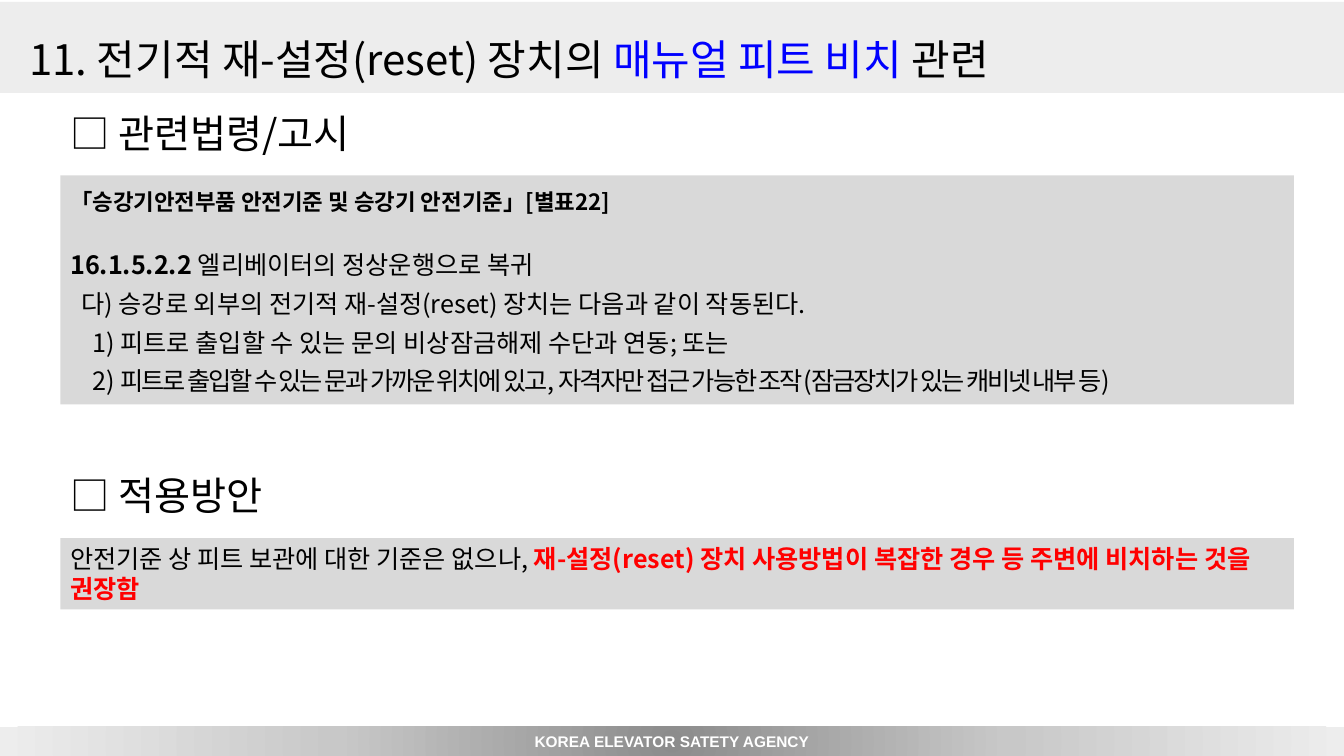
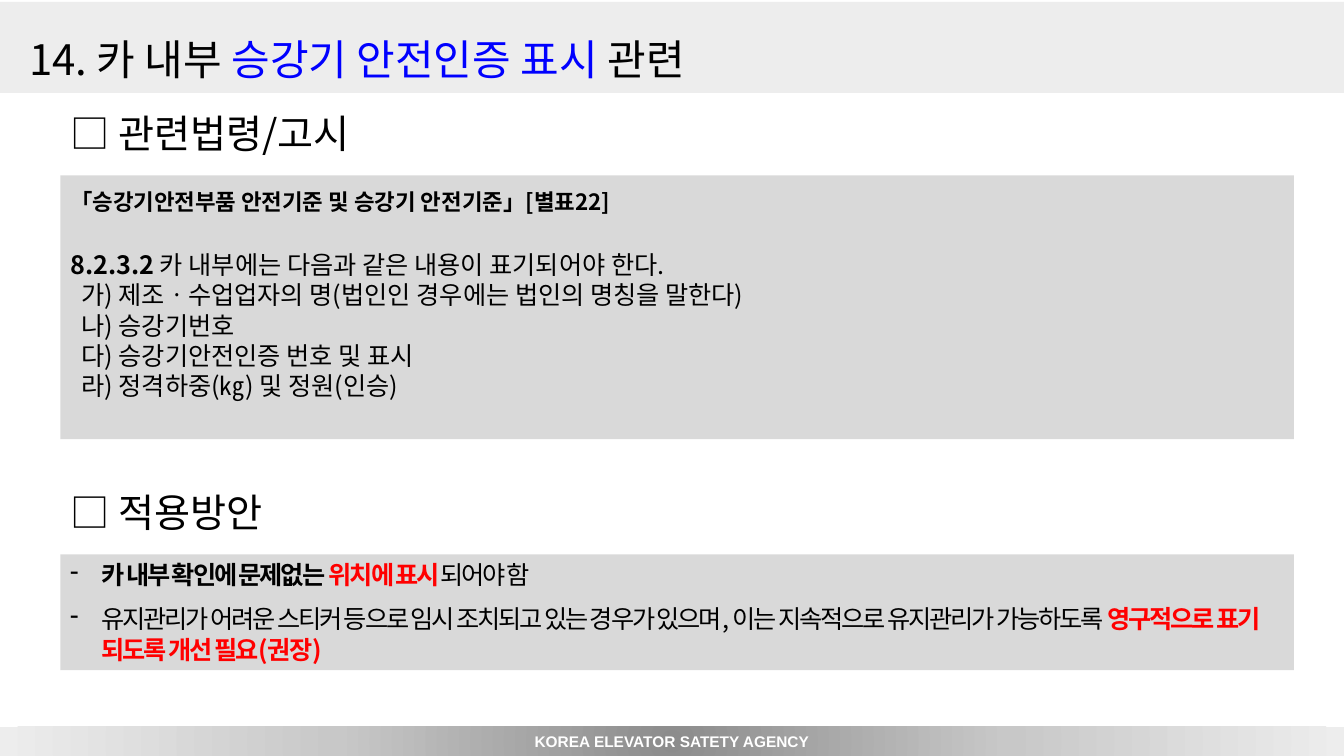
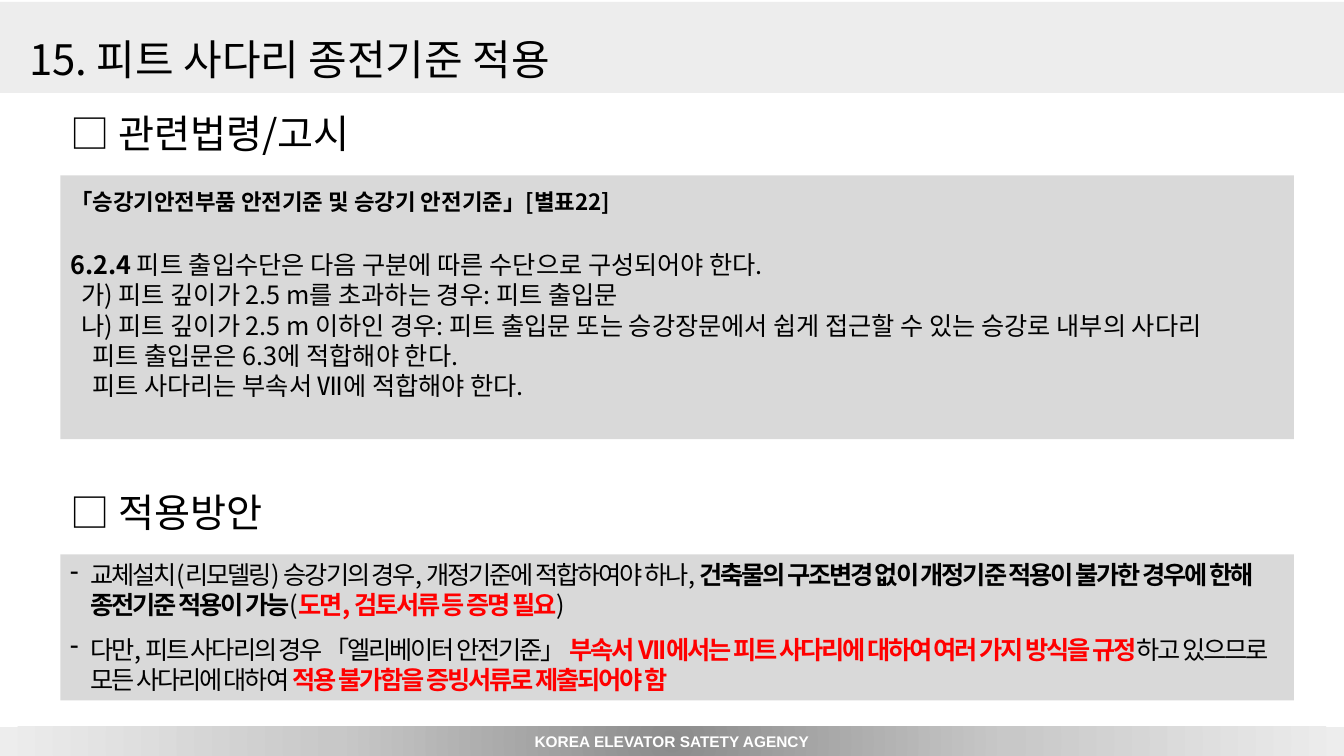
from dataclasses import dataclass
from functools import partial

from pptx import Presentation
from pptx.dml.color import RGBColor
from pptx.enum import shapes, text
from pptx.oxml import parse_xml
from pptx.oxml.ns import nsdecls, qn
from pptx.util import Cm, Pt

HUES = {"black": "000000", "blue": "0000FF", "red": "FF0000", "white": "FFFFFF",
        "band": "EDEDED", "panel": "D9D9D9", "mid": "C8C8C8", "dark": "8C8C8C"}
FONT = "Noto Sans CJK KR"
WIDE, HIGH = 33.87, 19.05
LEFT, SPAN = 1.52, 31.09   # panels
RULE_TOP = 4.42            # top of the upper panel
LIFT = 1.8                 # heading above its panel
STEP = 0.28                # indent of one level


@dataclass
class Run:
    text: str
    bold: bool = False
    hue: str = "black"
    tight: bool = False
    size: float = 18


@dataclass
class Para:
    runs: list[Run]
    left: float = 0
    before: float = 0
    lines: float = 1
    dash: bool = False


@dataclass
class Page:
    title: list[Run]
    rule: list[Para]
    rule_high: float
    plan: list[Para]
    plan_top: float
    plan_high: float


Close = partial(Run, tight=True)
Key = partial(Run, bold=True, hue="red")
Head = partial(Run, size=30)


def color(name: str) -> RGBColor:
    return RGBColor.from_string(HUES[name])


def add_run(par, run: Run, face: str = FONT) -> None:
    item = par.add_run()
    item.text = run.text
    font = item.font
    font.size, font.bold, font.name = Pt(run.size), run.bold, face
    font.color.rgb = color(run.hue)
    props = item._r.get_or_add_rPr()
    props.find(qn("a:latin")).addnext(
        parse_xml(f'<a:ea {nsdecls("a")} typeface="{face}"/>'))
    if run.tight:
        props.set("spc", "-150")


def fill_text(frame, paras: list[Para]) -> None:
    frame.word_wrap = True
    frame.auto_size = text.MSO_AUTO_SIZE.NONE
    frame.vertical_anchor = text.MSO_ANCHOR.TOP
    for i, para in enumerate(paras):
        par = frame.add_paragraph() if i else frame.paragraphs[0]
        props = par._p.get_or_add_pPr()
        props.set("marL", str(Cm(para.left)))
        props.set("indent", str(-Cm(para.left) if para.dash else 0))
        if para.dash:
            props.append(parse_xml(f'<a:buChar {nsdecls("a")} char="-"/>'))
        par.alignment = text.PP_ALIGN.LEFT
        par.line_spacing = para.lines
        par.space_before = Pt(para.before)
        for run in para.runs:
            add_run(par, run)


def add_box(slide, left: float, top: float, wide: float, high: float, hue: str):
    box = slide.shapes.add_shape(shapes.MSO_SHAPE.RECTANGLE,
                                 Cm(left), Cm(top), Cm(wide), Cm(high))
    box.shadow.inherit = False
    box.line.fill.background()
    box.fill.solid()
    box.fill.fore_color.rgb = color(hue)
    return box


def add_part(slide, name: str, wide: float, top: float, high: float,
             paras: list[Para]) -> None:
    """Heading with the grey panel below it."""
    panel = add_box(slide, LEFT, top, SPAN, high, "panel")
    fill_text(panel.text_frame, paras)
    label = slide.shapes.add_textbox(Cm(LEFT), Cm(top - LIFT), Cm(wide), Cm(1.45))
    fill_text(label.text_frame, [Para([Run(name, size=28)])])


def dress(layout, slide) -> None:
    """Put the title place, top band and footer on the layout."""
    band = add_box(slide, 0, 0.05, WIDE, 2.29, "band")
    foot = add_box(slide, 0, 18.31, WIDE, 0.74, "mid")
    stops = "".join(
        f'<a:gs pos="{pos * 1000}"><a:srgbClr val="{HUES[hue]}"/></a:gs>'
        for pos, hue in ((0, "dark"), (50, "mid"), (100, "band")))
    solid = foot.element.spPr.find(qn("a:solidFill"))
    foot.element.spPr.replace(solid, parse_xml(
        f'<a:gradFill {nsdecls("a")}><a:gsLst>{stops}</a:gsLst><a:path path="circle">'
        '<a:fillToRect l="50000" t="50000" r="50000" b="50000"/></a:path></a:gradFill>'))
    foot.text_frame.vertical_anchor = text.MSO_ANCHOR.MIDDLE
    par = foot.text_frame.paragraphs[0]
    par.alignment = text.PP_ALIGN.CENTER
    add_run(par, Run("KOREA ELEVATOR SATETY AGENCY", True, "white", size=11), "Arial")
    for part in (foot, band):
        layout.shapes.element.insert(2, part.element)
    title = layout.placeholders[0]
    title.left, title.top = Cm(0.48), Cm(0.71)
    title.width, title.height = Cm(32.5), Cm(1.55)


def law(code: str, lead: str) -> list[Para]:
    """Opening lines of each upper panel."""
    return [Para([Run("「승강기안전부품 안전기준 및 승강기 안전기준」[별표22]", True, size=16)],
                 lines=1.3),
            Para([Run(code + " ", True), Run(lead)], before=24.5)]


def items(*rows: tuple[int, str]) -> list[Para]:
    return [Para([Run(line)], left=level * STEP) for level, line in rows]


PAGES = [
    Page(
        [Head("11. 전기적 재-설정(reset) 장치의 "), Head("매뉴얼 피트 비치 ", hue="blue"),
         Head("관련")],
        law("16.1.5.2.2", "엘리베이터의 정상운행으로 복귀") + [
            Para([Run("다) 승강로 외부의 전기적 재-설정(reset) 장치는 다음과 같이 작동된다.")],
                 STEP, 6),
            Para([Run("1) 피트로 출입할 수 있는 문의 비상잠금해제 수단과 연동; 또는")],
                 2 * STEP, 6),
            Para([Run("2) "),
                  Close("피트로 출입할 수 있는 문과 가까운 위치에 있고, "
                        "자격자만 접근 가능한 조작(잠금장치가 있는 캐비넷 내부 등)")],
                 2 * STEP, 6)],
        5.77,
        [Para([Run("안전기준 상 피트 보관에 대한 기준은 없으나, "),
               Key("재-설정(reset) 장치 사용방법이 복잡한 경우 등 주변에 비치하는 것을 권장함")])],
        13.56, 1.8),
    Page(
        [Head("14. 카 내부 "), Head("승강기 안전인증 표시 ", hue="blue"), Head("관련")],
        law("8.2.3.2", "카 내부에는 다음과 같은 내용이 표기되어야 한다.") + items(
            (1, "가) 제조ㆍ수업업자의 명(법인인 경우에는 법인의 명칭을 말한다)"),
            (1, "나) 승강기번호"),
            (1, "다) 승강기안전인증 번호 및 표시"),
            (1, "라) 정격하중(㎏) 및 정원(인승)")),
        6.65,
        [Para([Close("카 내부 확인에 문제없는 ", True), Key("위치에 표시", tight=True),
               Close("되어야 함")], 0.79, dash=True),
         Para([Close("유지관리가 어려운 스티커 등으로 임시 조치되고 있는 경우가 있으며, "
                     "이는 지속적으로 유지관리가 가능하도록 "),
               Key("영구적으로 표기 되도록 개선 필요(권장)", tight=True)],
              0.79, 10, dash=True)],
        13.97, 2.92),
    Page(
        [Head("15. 피트 사다리 종전기준 적용")],
        law("6.2.4", "피트 출입수단은 다음 구분에 따른 수단으로 구성되어야 한다.") + items(
            (1, "가) 피트 깊이가 2.5 m를 초과하는 경우: 피트 출입문"),
            (1, "나) 피트 깊이가 2.5 m 이하인 경우: 피트 출입문 또는 "
                "승강장문에서 쉽게 접근할 수 있는 승강로 내부의 사다리"),
            (2, "피트 출입문은 6.3에 적합해야 한다."),
            (2, "피트 사다리는 부속서 Ⅶ에 적합해야 한다.")),
        6.65,
        [Para([Close("교체설치(리모델링) 승강기의 경우, 개정기준에 적합하여야 하나, "),
               Close("건축물의 구조변경 없이 개정기준 적용이 불가한 경우에 한해 "
                     "종전기준 적용이 가능", True),
               Close("("), Key("도면, 검토서류 등 증명 필요", tight=True), Close(")")],
              0.51, dash=True),
         Para([Close("다만, 피트 사다리의 경우 「엘리베이터 안전기준」 "),
               Key("부속서 VII에서는 피트 사다리에 대하여 여러 가지 방식을 규정", tight=True),
               Close("하고 있으므로 모든 사다리에 대하여 "),
               Key("적용 불가함을 증빙서류로 제출되어야 함", tight=True)],
              0.51, 10, dash=True)],
        13.97, 3.68),
]


def main() -> None:
    deck = Presentation()
    deck.slide_width, deck.slide_height = Cm(WIDE), Cm(HIGH)
    layout = deck.slide_layouts[5]
    for i, page in enumerate(PAGES):
        slide = deck.slides.add_slide(layout)
        if i == 0:
            dress(layout, slide)
        fill_text(slide.shapes.title.text_frame, [Para(page.title)])
        add_part(slide, "□ 관련법령/고시", 8.5, RULE_TOP, page.rule_high, page.rule)
        add_part(slide, "□ 적용방안", 6.1, page.plan_top, page.plan_high, page.plan)
    deck.save("out.pptx")


if __name__ == "__main__":
    main()
